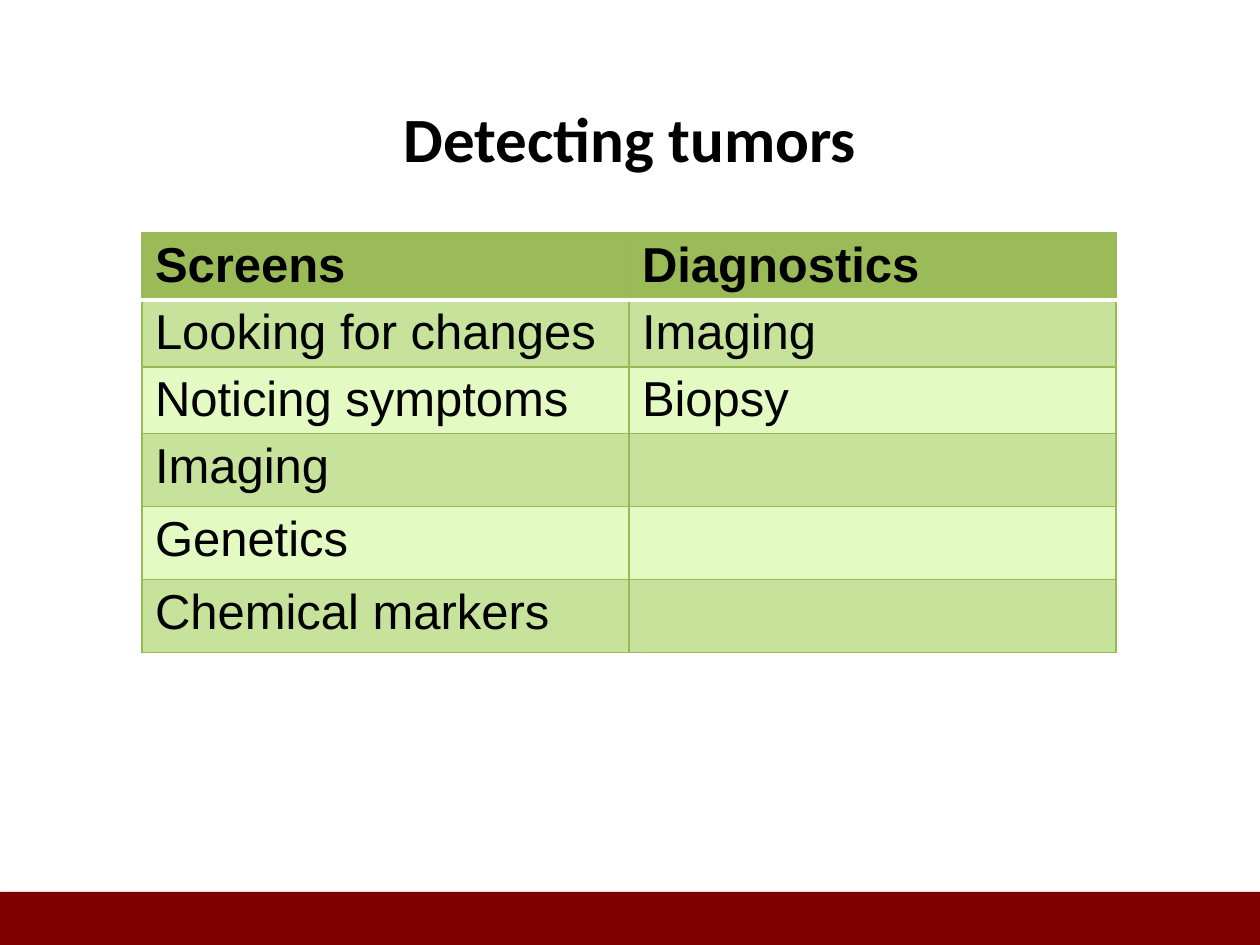
"""Build the slide "Detecting tumors": a title, a two-column table and a footer band."""
import pptx
import pptx.dml.color
import pptx.enum.shapes
import pptx.enum.text
import pptx.oxml
import pptx.oxml.ns
import pptx.util

COLORS = {
    "text": "000000",
    "band": "800000",
    "header": "9BBB59",
    "odd_row": "C7E29A",
    "even_row": "E3FBC2",
    "border": "98B955",
    "header_rule": "FFFFFF",
}
ROWS = [
    ("Screens", "Diagnostics"),
    ("Looking for changes", "Imaging"),
    ("Noticing symptoms", "Biopsy"),
    ("Imaging", ""),
    ("Genetics", ""),
    ("Chemical markers", ""),
]
ROW_HEIGHTS = [67, 67, 67, 73, 73, 73]
COLUMN_WIDTH = 487


def px(length):
    return pptx.util.Emu(round(length * 914400 / 126))


def format_text(para, size, font, bold):
    para.font.size = pptx.util.Pt(size)
    for span in para.runs:
        span.font.name = font
        span.font.size = pptx.util.Pt(size)
        span.font.bold = bold
        span.font.color.rgb = pptx.dml.color.RGBColor.from_string(COLORS["text"])


deck = pptx.Presentation()
deck.slide_width, deck.slide_height = px(1260), px(945)
page = deck.slides.add_slide(deck.slide_layouts[5])

band = page.shapes.add_shape(
    pptx.enum.shapes.MSO_SHAPE.RECTANGLE, px(0), px(892), px(1260), px(53)
)
band.fill.solid()
band.fill.fore_color.rgb = pptx.dml.color.RGBColor.from_string(COLORS["band"])
band.line.fill.background()
band.shadow.inherit = False
effects = band._element.spPr.find(pptx.oxml.ns.qn("a:effectLst"))
effects.append(pptx.oxml.parse_xml(
    f'<a:outerShdw {pptx.oxml.ns.nsdecls("a")} blurRad="39370" dist="22860" dir="5400000" '
    'rotWithShape="0"><a:srgbClr val="000000"><a:alpha val="35000"/></a:srgbClr></a:outerShdw>'
))

title = page.shapes.title
title.left, title.top, title.width, title.height = px(63), px(58), px(1134), px(158)
title.text_frame.text = "Detecting tumors"
title.text_frame.vertical_anchor = pptx.enum.text.MSO_ANCHOR.MIDDLE
title_para = title.text_frame.paragraphs[0]
title_para.alignment = pptx.enum.text.PP_ALIGN.CENTER
format_text(title_para, 36, "Calibri", True)

table = page.shapes.add_table(
    len(ROWS), 2, px(142), px(233), px(2 * COLUMN_WIDTH), px(sum(ROW_HEIGHTS))
).table
for column in table.columns:
    column.width = px(COLUMN_WIDTH)

for row_index, labels in enumerate(ROWS):
    table.rows[row_index].height = px(ROW_HEIGHTS[row_index])
    if row_index == 0:
        fill_name = "header"
    else:
        fill_name = "odd_row" if row_index % 2 else "even_row"
    for column_index, label in enumerate(labels):
        cell = table.cell(row_index, column_index)
        cell.margin_top = cell.margin_bottom = px(5)
        cell.margin_left = cell.margin_right = px(13)
        cell.text_frame.text = label
        format_text(cell.text_frame.paragraphs[0], 28, "Arial", row_index == 0)
        for side in "LRTB":
            under_header = (row_index, side) in [(0, "B"), (1, "T")]
            color = COLORS["header_rule" if under_header else "border"]
            width = pptx.util.Pt(2 if under_header else 0.75)
            cell._tc.get_or_add_tcPr().append(pptx.oxml.parse_xml(
                f'<a:ln{side} {pptx.oxml.ns.nsdecls("a")} w="{width}"><a:solidFill>'
                f'<a:srgbClr val="{color}"/></a:solidFill></a:ln{side}>'
            ))
        cell.fill.solid()
        cell.fill.fore_color.rgb = pptx.dml.color.RGBColor.from_string(COLORS[fill_name])

deck.save("out.pptx")
